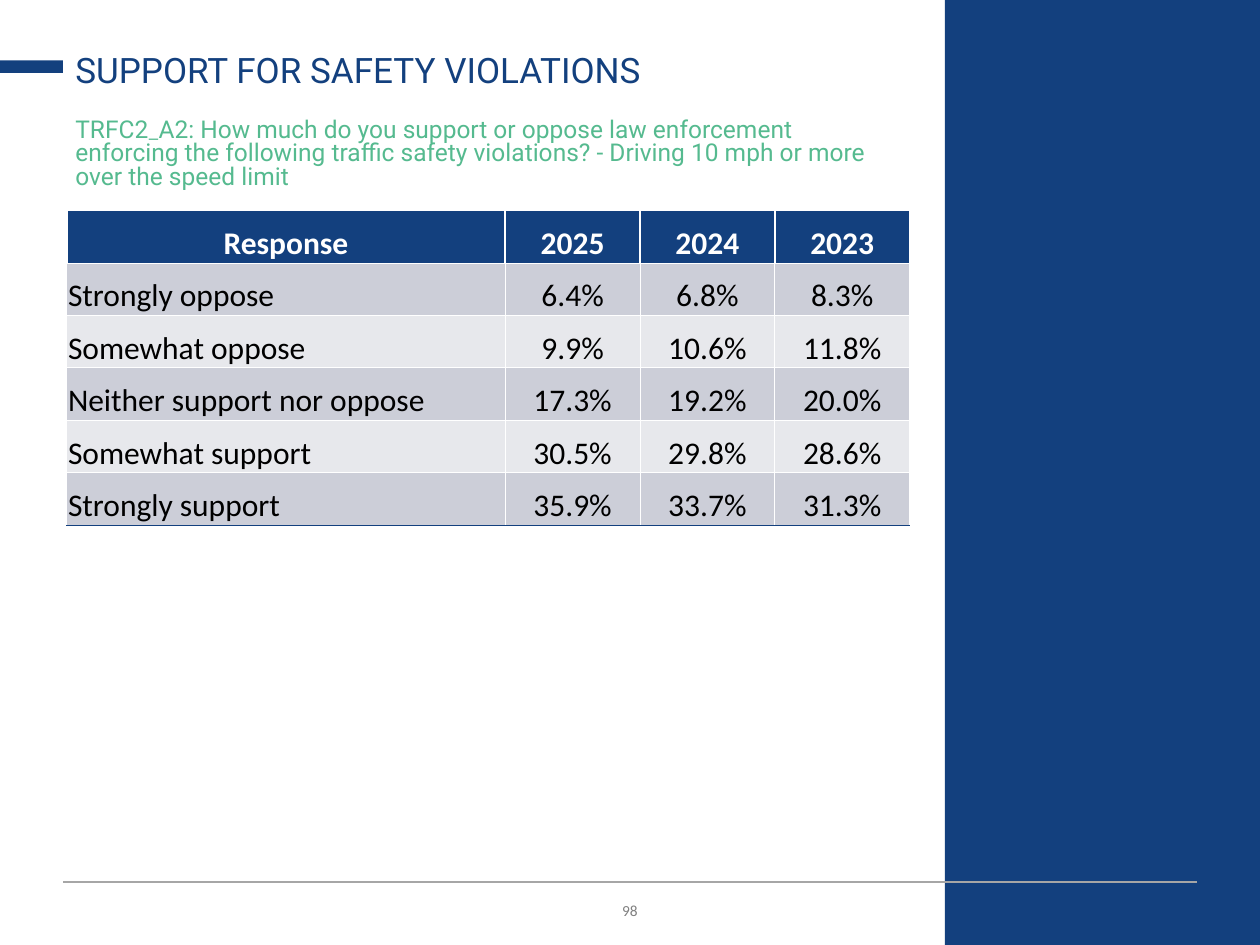
from dataclasses import dataclass

from lxml import etree
from pptx import Presentation
from pptx.dml.color import RGBColor
from pptx.enum import shapes, text
from pptx.oxml import ns
from pptx.util import Inches, Pt


@dataclass(frozen=True)
class Theme:
    navy: str = "13407E"
    green: str = "55BA8F"
    white: str = "FFFFFF"
    black: str = "000000"
    gray: str = "808080"
    rule: str = "A6A6A6"
    bands: tuple = ("CCCED8", "E7E8EC")
    head: str = "Roboto"
    alt: str = "League Spartan"
    body: str = "Calibri"
    title: float = 20
    ask: float = 14
    cell: float = 18
    page: float = 11
    edge: float = 0.5


@dataclass(frozen=True)
class Box:
    left: float
    top: float
    width: float
    height: float

    def emu(self) -> tuple:
        return tuple(map(Inches, (self.left, self.top, self.width, self.height)))


@dataclass(frozen=True)
class Label:
    box: Box
    pieces: tuple  # (words, font name) pairs
    size: float
    color: str
    anchor: text.MSO_ANCHOR = text.MSO_ANCHOR.TOP
    align: text.PP_ALIGN = text.PP_ALIGN.LEFT
    space: float = 1.0
    caps: bool = False


T = Theme()
BARS = (Box(7.5, 0, 2.5, 7.5), Box(0, 0.48, 0.5, 0.1))
LABELS = (
    Label(Box(0.5, 7.06, 9, 0.3), (("98", T.body),), T.page, T.gray,
          text.MSO_ANCHOR.MIDDLE, text.PP_ALIGN.CENTER, caps=True),
    Label(Box(0.5, 0.9, 6.7, 0.67),
          (("TRFC2", T.head), ("_", T.alt),
           ("A2: How much do you support or oppose law enforcement enforcing "
            "the following traffic safety violations? - Driving 10 mph or more "
            "over the speed limit", T.head)),
          T.ask, T.green, space=0.8),
    Label(Box(0.5, 0.29, 6.7, 0.48), (("SUPPORT FOR SAFETY VIOLATIONS", T.head),),
          T.title, T.navy, text.MSO_ANCHOR.BOTTOM, space=0.9),
)
GRID = Box(0.53, 1.67, 6.69, 2.5)
COLS = (3.48, 1.07, 1.07, 1.07)
ROWS = (
    ("Response", "2025", "2024", "2023"),
    ("Strongly oppose", "6.4%", "6.8%", "8.3%"),
    ("Somewhat oppose", "9.9%", "10.6%", "11.8%"),
    ("Neither support nor oppose", "17.3%", "19.2%", "20.0%"),
    ("Somewhat support", "30.5%", "29.8%", "28.6%"),
    ("Strongly support", "35.9%", "33.7%", "31.3%"),
)


def style(run, name: str, size: float, color: str, bold: bool = False) -> None:
    font = run.font
    font.name, font.size, font.bold = name, Pt(size), bold
    font.color.rgb = RGBColor.from_string(color)


def add_bar(slide, box: Box) -> None:
    bar = slide.shapes.add_shape(shapes.MSO_SHAPE.RECTANGLE, *box.emu())
    bar.shadow.inherit = False
    bar.fill.solid()
    bar.fill.fore_color.rgb = RGBColor.from_string(T.navy)
    bar.line.fill.background()


def add_rule(slide) -> None:
    line = slide.shapes.add_connector(
        shapes.MSO_CONNECTOR.STRAIGHT, Inches(0.5), Inches(7), Inches(9.5), Inches(7))
    line.line.color.rgb = RGBColor.from_string(T.rule)
    line.line.width = Pt(0.75)
    etree.SubElement(line._element.spPr, ns.qn("a:effectLst"))


def add_label(slide, label: Label) -> None:
    frame = slide.shapes.add_textbox(*label.box.emu()).text_frame
    frame.word_wrap = True
    frame.vertical_anchor = label.anchor
    para = frame.paragraphs[0]
    para.alignment, para.line_spacing = label.align, label.space
    for words, name in label.pieces:
        run = para.add_run()
        run.text = words
        style(run, name, label.size, label.color)
        if label.caps:
            run._r.get_or_add_rPr().set("cap", "small")


def add_edges(cell, edges: dict) -> None:
    """Put borders ahead of the cell fill, as the schema asks."""
    props = cell._tc.get_or_add_tcPr()
    for spot, (side, color) in enumerate(edges.items()):
        line = etree.Element(ns.qn(f"a:ln{side}"), w=str(Pt(T.edge)))
        fill = etree.SubElement(line, ns.qn("a:solidFill"))
        etree.SubElement(fill, ns.qn("a:srgbClr"), val=color)
        props.insert(spot, line)


def fill_cell(cell, words: str, row: int, col: int) -> None:
    head, last = row == 0, row == len(ROWS) - 1
    cell.text_frame.text = words
    cell.vertical_anchor = text.MSO_ANCHOR.BOTTOM
    cell.margin_left = cell.margin_right = cell.margin_top = Inches(0.01)
    cell.margin_bottom = 0
    para = cell.text_frame.paragraphs[0]
    if head or col:
        para.alignment = text.PP_ALIGN.CENTER
    style(para.runs[0], T.body, T.cell, T.white if head else T.black, head)
    cell.fill.solid()
    cell.fill.fore_color.rgb = RGBColor.from_string(
        T.navy if head else T.bands[(row - 1) % 2])
    edges = {} if head else dict.fromkeys("LRT", T.white)
    add_edges(cell, edges | {"B": T.navy if last else T.white})


def add_grid(slide) -> None:
    table = slide.shapes.add_table(len(ROWS), len(COLS), *GRID.emu()).table
    for col, width in zip(table.columns, COLS):
        col.width = Inches(width)
    for row, words in enumerate(ROWS):
        table.rows[row].height = Inches(GRID.height / len(ROWS))
        for col, word in enumerate(words):
            fill_cell(table.cell(row, col), word, row, col)


def main() -> None:
    deck = Presentation()
    deck.slide_width, deck.slide_height = Inches(10), Inches(7.5)
    slide = deck.slides.add_slide(deck.slide_layouts[6])
    for box in BARS:
        add_bar(slide, box)
    add_rule(slide)
    for label in LABELS:
        add_label(slide, label)
    add_grid(slide)
    deck.save("out.pptx")


if __name__ == "__main__":
    main()
